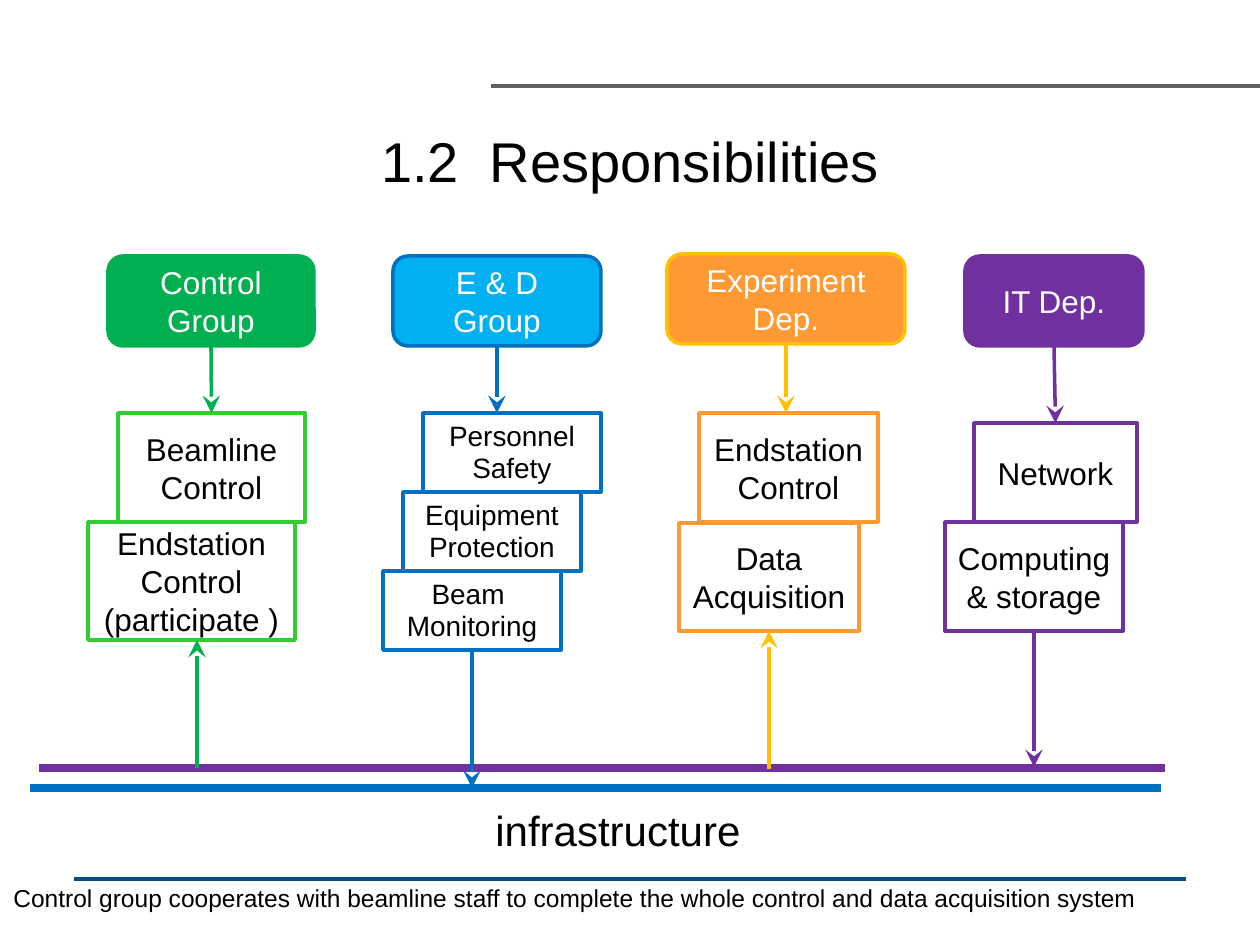
from lxml import etree
from pptx import Presentation
from pptx import util as u
from pptx.dml.color import RGBColor
from pptx.enum import shapes, text
from pptx.oxml import ns

SCALE = 914400 / 126
COLORS = {
    "white": "FFFFFF", "black": "000000", "gray": "5F5F5F", "navy": "005088",
    "green": "00B050", "lime": "33CC33", "sky": "00B0F0", "blue": "0070C0",
    "orange": "FF9933", "gold": "FFC000", "purple": "7030A0",
}
TOP, BOTTOM = 0, 2


def px(value):
    return u.Emu(round(value * SCALE))


def color(name):
    return RGBColor.from_string(COLORS[name])


class Deck:
    font = "Arial"

    def __init__(self, width, height):
        self.presentation = Presentation()
        self.presentation.slide_width = px(width)
        self.presentation.slide_height = px(height)
        self.slide = self.presentation.slides.add_slide(self.presentation.slide_layouts[6])

    def set_words(self, shape, words, size, ink, align, spacing=None):
        frame = shape.text_frame
        frame.text = words
        for paragraph in frame.paragraphs:
            paragraph.alignment = align
            if spacing:
                paragraph.line_spacing = u.Pt(spacing)
            for run in paragraph.runs:
                run.font.name = self.font
                run.font.size = u.Pt(size)
                run.font.color.rgb = color(ink)

    def label(self, words, box, size, align=text.PP_ALIGN.LEFT,
              anchor=text.MSO_ANCHOR.TOP, wrap=True):
        shape = self.slide.shapes.add_textbox(*map(px, box))
        shape.text_frame.word_wrap = wrap
        shape.text_frame.vertical_anchor = anchor
        self.set_words(shape, words, size, "black", align)

    def block(self, kind, words, box, fill, line, ink, size=18, spacing=None):
        shape = self.slide.shapes.add_shape(kind, *map(px, box))
        shape.shadow.inherit = False
        shape.fill.solid()
        shape.fill.fore_color.rgb = color(fill)
        shape.line.color.rgb = color(line)
        shape.line.width = u.Pt(2)
        shape.text_frame.word_wrap = True
        shape.text_frame.vertical_anchor = text.MSO_ANCHOR.MIDDLE
        self.set_words(shape, words, size, ink, text.PP_ALIGN.CENTER, spacing)
        return shape

    def header(self, words, box, fill, line):
        return self.block(shapes.MSO_SHAPE.ROUNDED_RECTANGLE, words, box, fill, line, "white")

    def task(self, words, box, line, size=18, spacing=None):
        shape = self.block(shapes.MSO_SHAPE.RECTANGLE, words, box, "white", line,
                           "black", size, spacing)
        shape.text_frame.margin_left = shape.text_frame.margin_right = px(6)
        return shape

    def line(self, start, end, ink, width):
        connector = self.slide.shapes.add_connector(
            shapes.MSO_CONNECTOR.STRAIGHT, *map(px, start + end))
        connector.line.color.rgb = color(ink)
        connector.line.width = u.Pt(width)
        etree.SubElement(connector._element.spPr, ns.qn("a:effectLst"))
        return connector

    def arrow(self, start, end, ink, source=None, target=None):
        connector = self.line(start, end, ink, 2)
        etree.SubElement(connector.line._get_or_add_ln(), ns.qn("a:tailEnd"),
                         type="stealth", w="lg", len="lg")
        if source:
            connector.begin_connect(source, BOTTOM)
        if target:
            connector.end_connect(*target)

    def save(self):
        self.presentation.save("out.pptx")


def main():
    deck = Deck(1260, 945)
    deck.line((491, 86), (1260, 86), "gray", 2.25)
    deck.line((74, 879), (1186, 879), "navy", 2.25)
    deck.label("1.2  Responsibilities", (88, 109, 1085, 102), 32,
               text.PP_ALIGN.CENTER, text.MSO_ANCHOR.MIDDLE)

    control = deck.header("Control Group", (108, 256, 206, 90), "green", "green")
    equipment = deck.header("E & D Group", (393, 256, 208, 90), "sky", "blue")
    experiment = deck.header("Experiment Dep.", (667, 254, 238, 90), "orange", "gold")
    computing = deck.header("IT Dep.", (965, 256, 178, 90), "purple", "purple")

    beamline = deck.task("Beamline Control", (118, 413, 187, 109), "lime")
    deck.task("Endstation Control (participate )", (88, 522, 207, 118), "lime")

    safety_tasks = ["Personnel Safety", "Equipment Protection", "Beam  Monitoring"]
    for step, words in enumerate(safety_tasks):
        monitoring = deck.task(words, (423 - 20 * step, 413 + 79 * step, 178, 79),
                               "blue", 16, 18)

    deck.task("Endstation Control", (699, 413, 179, 109), "orange")
    acquisition = deck.task("Data Acquisition", (679, 523, 180, 108), "orange")
    network = deck.task("Network", (974, 423, 163, 99), "purple")
    storage = deck.task("Computing\n& storage", (945, 522, 178, 109), "purple")

    deck.arrow((211, 346), (211, 413), "green", control, (beamline, TOP))
    deck.arrow((497, 346), (497, 413), "blue", equipment)
    deck.arrow((786, 344), (786, 413), "gold", experiment)
    deck.arrow((1055, 346), (1055, 423), "purple", computing, (network, TOP))

    deck.line((39, 768), (1165, 768), "purple", 4.5)
    deck.label("infrastructure", (483, 798, 346, 63), 24)
    deck.arrow((1034, 631), (1034, 767), "purple", storage)
    deck.arrow((472, 650), (472, 788), "blue", monitoring)
    deck.arrow((769, 769), (769, 631), "gold", target=(acquisition, BOTTOM))
    deck.arrow((197, 768), (197, 640), "green")
    deck.line((30, 788), (1161, 788), "blue", 4.5)

    deck.label("Control group cooperates with beamline staff to complete the whole "
               "control and data acquisition system", (1, 877, 1160, 43), 14, wrap=False)
    deck.save()


if __name__ == "__main__":
    main()
